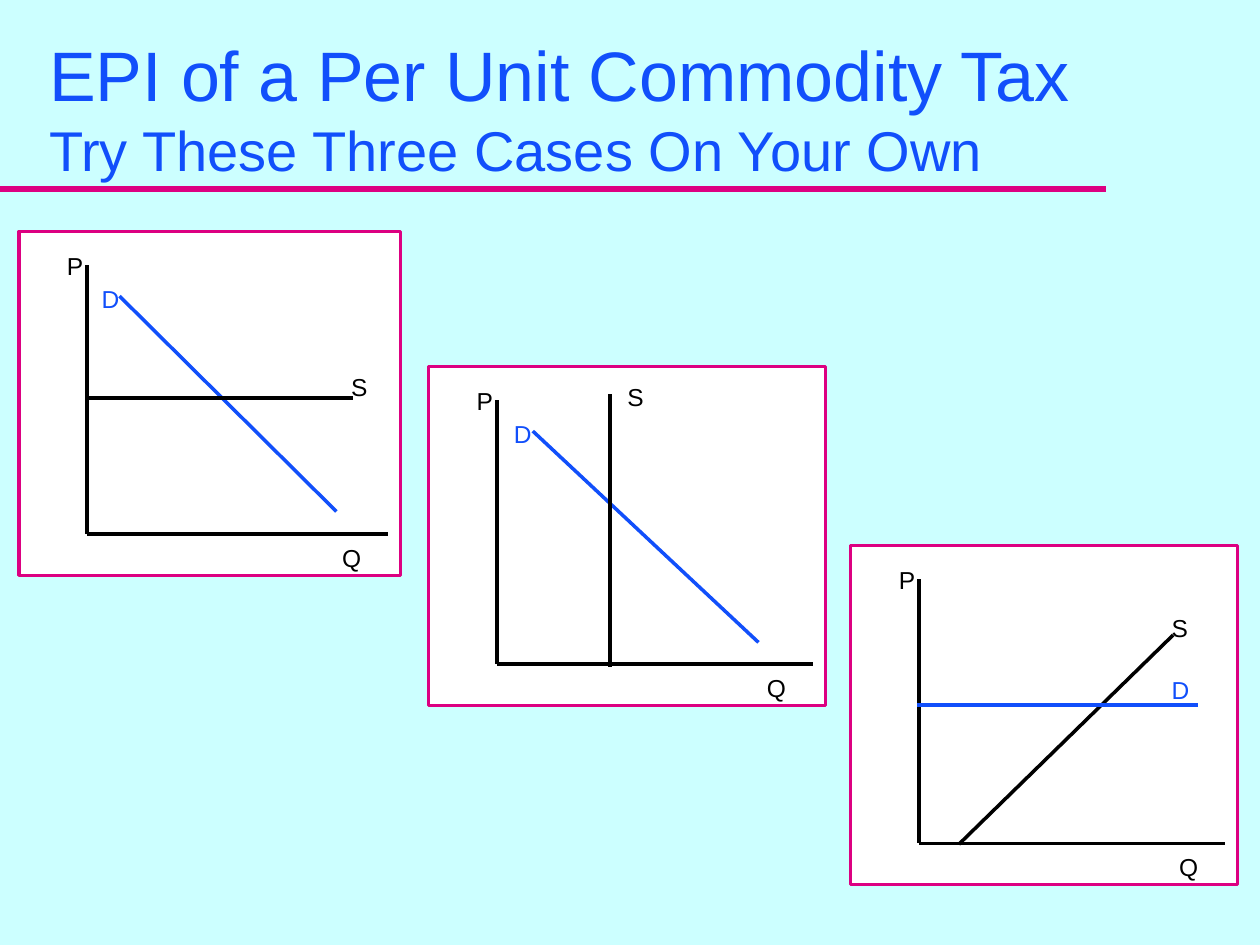
import pptx
import pptx.util
import pptx.dml.color
import pptx.enum.shapes
import pptx.enum.text
import pptx.oxml.ns
import lxml.etree

Cm, Pt = pptx.util.Cm, pptx.util.Pt

THEME = {
    "font": "Arial", "back": "CCFFFF", "panel": "FFFFFF", "rule": "DC0081",
    "ink": "000000", "blue": "114FFB",
    "title": 40, "sub": 32, "label": 14,
    "thin": 2, "mid": 2.25, "thick": 4,
}

# Content, in cm: each curve is name, colour, weight, start, end, label corner
TITLE = [("EPI of a Per Unit Commodity Tax", "title"),
         ("Try These Three Cases On Your Own", "sub")]
CASES = [
    {"frame": (0.38, 4.67, 7.7, 6.93), "curves": [
        ("D", "blue", "thin", (2.41, 5.97), (6.78, 10.31), (1.8, 5.61)),
        ("S", "ink", "mid", (1.8, 8.03), (7.11, 8.03), (6.83, 7.37))]},
    {"frame": (8.64, 7.39, 8, 6.83), "curves": [
        ("D", "blue", "thin", (10.74, 8.69), (15.29, 12.95), (10.11, 8.33)),
        ("S", "ink", "mid", (12.29, 13.44), (12.29, 7.95), (12.4, 7.57))]},
    {"frame": (17.15, 11, 7.8, 6.83), "curves": [
        ("S", "ink", "thin", (19.33, 17.02), (23.65, 12.8), (23.37, 12.24)),
        ("D", "blue", "mid", (18.49, 14.22), (24.16, 14.22), (23.37, 13.49))]},
]


def tint(name):
    return pptx.dml.color.RGBColor.from_string(THEME[name])


def text(home, lines, left, top, wide=1.04, high=0.84, hue="ink"):
    box = home.add_textbox(Cm(left), Cm(top), Cm(wide), Cm(high))
    frame = box.text_frame
    frame.word_wrap = True
    frame.vertical_anchor = pptx.enum.text.MSO_ANCHOR.MIDDLE
    para = frame.paragraphs[0]
    for row, (words, size) in enumerate(lines):
        if row:
            para.add_line_break()
        run = para.add_run()
        run.text = words
        run.font.name = THEME["font"]
        run.font.size = Pt(THEME[size])
        run.font.color.rgb = tint(hue)


def line(home, start, end, hue="ink", weight="thin"):
    kind = pptx.enum.shapes.MSO_CONNECTOR.STRAIGHT
    link = home.add_connector(kind, *(Cm(n) for n in start + end))
    link.line.color.rgb = tint(hue)
    link.line.width = Pt(THEME[weight])
    tag = pptx.oxml.ns.qn("a:effectLst")
    lxml.etree.SubElement(link.element.spPr, tag)


def panel(home, frame, curves):
    # White frame
    kind = pptx.enum.shapes.MSO_SHAPE.RECTANGLE
    card = home.add_shape(kind, *(Cm(n) for n in frame))
    card.shadow.inherit = False
    card.fill.solid()
    card.fill.fore_color.rgb = tint("panel")
    card.line.color.rgb = tint("rule")
    card.line.width = Pt(THEME["thin"])

    # Axes, set in from the frame
    left, top, wide, high = frame
    zero = (left + 1.38, top + high - 0.83)
    right = left + wide - 0.26
    line(home, (zero[0], top + 0.68), zero)
    line(home, zero, (right, zero[1]))
    text(home, [("P", "label")], zero[0] - 0.66, top + 0.26)
    text(home, [("Q", "label")], right - 1.17, zero[1] + 0.05)

    # Curves and their labels
    for name, hue, weight, start, end, spot in curves:
        line(home, start, end, hue, weight)
        text(home, [(name, "label")], *spot, hue=hue)


def main():
    deck = pptx.Presentation()
    deck.slide_width, deck.slide_height = Cm(25.4), Cm(19.05)
    slide = deck.slides.add_slide(deck.slide_layouts[6])
    slide.background.fill.solid()
    slide.background.fill.fore_color.rgb = tint("back")

    # Heading and rule
    line(slide.shapes, (0, 3.81), (22.3, 3.81), "rule", "thick")
    text(slide.shapes, TITLE, 0.74, 0.46, 23.93, 3.4, hue="blue")

    # One group per case
    for case in CASES:
        panel(slide.shapes.add_group_shape().shapes, **case)

    deck.save("out.pptx")


if __name__ == "__main__":
    main()
